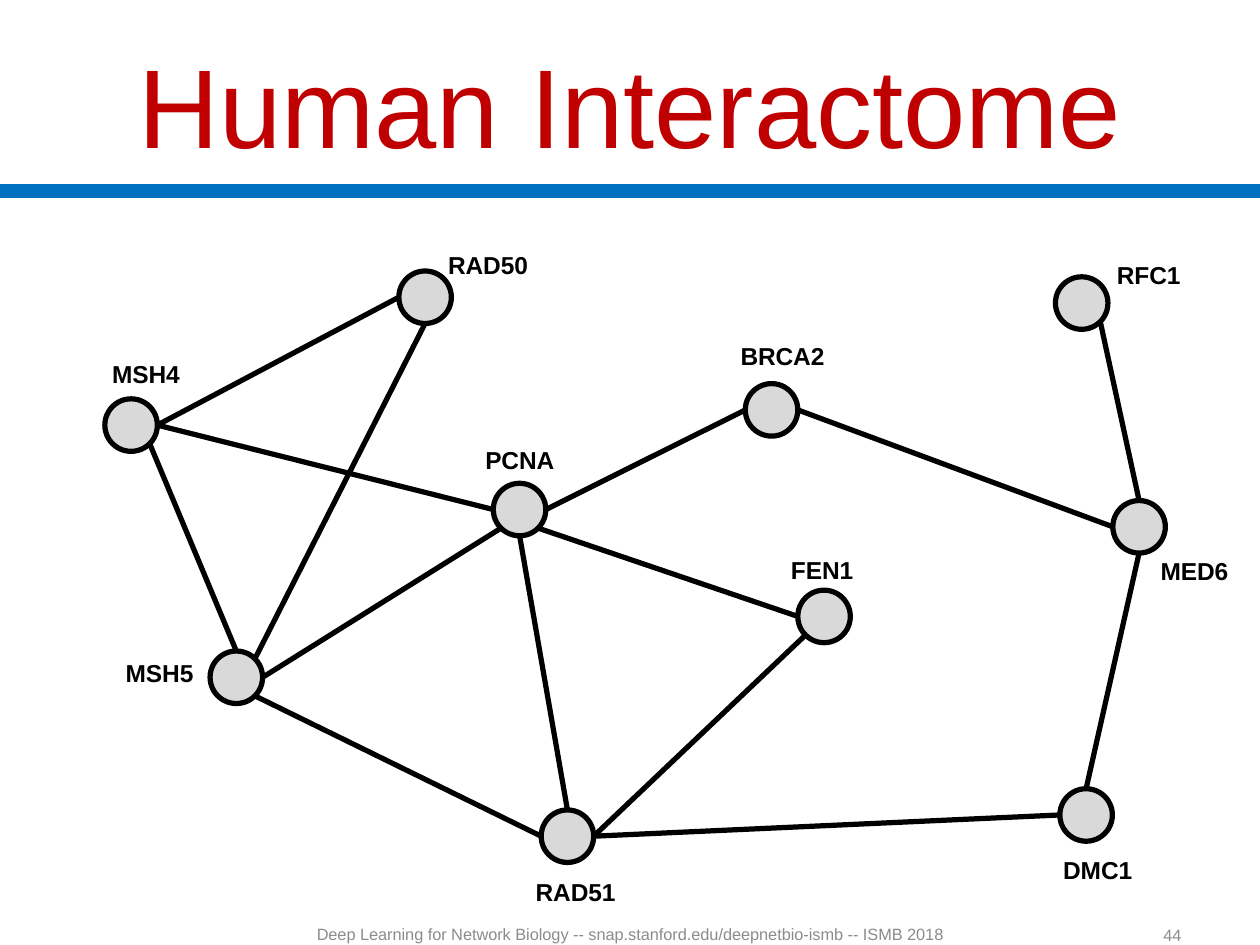
import math

import pptx
import pptx.dml.color
import pptx.enum.shapes
import pptx.enum.text
import pptx.oxml
import pptx.oxml.ns
import pptx.util

Pt = pptx.util.Pt
ALIGN = pptx.enum.text.PP_ALIGN
ANCHOR = pptx.enum.text.MSO_ANCHOR
DIAMETER = 22.5

NODES = {
    "MSH4": (56.2, 182.2, 41, 150.5, 44.6),
    "RAD50": (182.2, 127.4, 185, 103.5, 49),
    "MSH5": (101.3, 290.3, 46.8, 278.5, 44.6),
    "BRCA2": (330.7, 175.7, 310.3, 142.5, 51),
    "PCNA": (222.7, 218.4, 200.9, 187.2, 44.6),
    "RFC1": (463.6, 129.9, 471.6, 108, 42.5),
    "FEN1": (353.2, 264.2, 331.9, 234.2, 41.8),
    "RAD51": (243.2, 358.4, 222.5, 372.2, 49),
    "MED6": (488.2, 225.8, 490.3, 234.7, 44.6),
    "DMC1": (465.5, 349.3, 448.6, 362.9, 45.4),
}

ANGLES = {"E": 0, "SE": 45, "S": 90, "SW": 135, "W": 180, "N": 270, "NE": 315}

EDGES = [
    ("MSH4", "SE", "MSH5", "N"),
    ("PCNA", "SW", "MSH5", "E"),
    ("RAD50", "W", "MSH4", "E"),
    ("FEN1", "SW", "RAD51", "E"),
    ("PCNA", "S", "RAD51", "N"),
    ("RAD51", "W", "MSH5", "SE"),
    ("RAD50", "S", "MSH5", "NE"),
    ("BRCA2", "W", "PCNA", "E"),
    ("PCNA", "SE", "FEN1", "W"),
    ("PCNA", "W", "MSH4", "E"),
    ("RFC1", "SE", "MED6", "N"),
    ("MED6", "S", "DMC1", "N"),
    ("BRCA2", "E", "MED6", "W"),
    ("RAD51", "E", "DMC1", "W"),
]


def rgb(value):
    return pptx.dml.color.RGBColor.from_string(value)


def put_text(tf, text, size=10.5, color="000000", bold=False,
             align=ALIGN.LEFT, anchor=ANCHOR.TOP, wrap=False):
    tf.auto_size = pptx.enum.text.MSO_AUTO_SIZE.NONE
    tf.word_wrap = wrap
    tf.vertical_anchor = anchor
    p = tf.paragraphs[0]
    p.alignment = align
    r = p.add_run()
    r.text = text
    r.font.name = "Arial"
    r.font.size = Pt(size)
    r.font.bold = bold
    r.font.color.rgb = rgb(color)


def rim_point(name, side):
    x, y = NODES[name][:2]
    angle = math.radians(ANGLES[side])
    return x + DIAMETER / 2 * math.cos(angle), y + DIAMETER / 2 * math.sin(angle)


class Deck:
    ink = "000000"
    node_fill = "D9D9D9"
    accent = "0070C0"
    title_color = "C00000"
    muted = "8C8C8C"
    line_width = 2.25

    def __init__(self, width, height):
        self.prs = pptx.Presentation()
        self.prs.slide_width = Pt(width)
        self.prs.slide_height = Pt(height)
        self.s = self.prs.slides.add_slide(self.prs.slide_layouts[5])

    def title(self, text, x, y, w, h):
        sp = self.s.shapes.title
        sp.left, sp.top, sp.width, sp.height = Pt(x), Pt(y), Pt(w), Pt(h)
        put_text(sp.text_frame, text, size=48, color=self.title_color,
                 align=ALIGN.CENTER, anchor=ANCHOR.MIDDLE, wrap=True)

    def text(self, text, x, y, w, h, **style):
        sp = self.s.shapes.add_textbox(Pt(x), Pt(y), Pt(w), Pt(h))
        put_text(sp.text_frame, text, **style)

    def line(self, start, end, color=ink, width=line_width):
        cxn = self.s.shapes.add_connector(
            pptx.enum.shapes.MSO_CONNECTOR.STRAIGHT,
            *(Pt(v) for v in (*start, *end)))
        cxn.line.color.rgb = rgb(color)
        cxn.line.width = Pt(width)
        cxn._element.spPr.append(pptx.oxml.parse_xml(
            "<a:effectLst %s/>" % pptx.oxml.ns.nsdecls("a")))

    def node(self, x, y):
        sp = self.s.shapes.add_shape(
            pptx.enum.shapes.MSO_SHAPE.OVAL, Pt(x - DIAMETER / 2),
            Pt(y - DIAMETER / 2), Pt(DIAMETER), Pt(DIAMETER))
        sp.shadow.inherit = False
        sp.fill.solid()
        sp.fill.fore_color.rgb = rgb(self.node_fill)
        sp.line.color.rgb = rgb(self.ink)
        sp.line.width = Pt(self.line_width)


def main():
    deck = Deck(540, 405)
    deck.line((0, 81.8), (540, 81.8), color=deck.accent, width=6)
    deck.title("Human Interactome", 0, 10.8, 540, 67.7)
    for x, y, *_ in NODES.values():
        deck.node(x, y)
    for a, a_side, b, b_side in EDGES:
        deck.line(rim_point(a, a_side), rim_point(b, b_side))
    for name, (_, _, left, top, width) in NODES.items():
        deck.text(name, left, top, width, 20, bold=True)
    small = dict(size=7, color=deck.muted, anchor=ANCHOR.MIDDLE, wrap=True)
    deck.text("Deep Learning for Network Biology -- "
              "snap.stanford.edu/deepnetbio-ismb -- ISMB 2018",
              92.9, 396, 354.2, 9, align=ALIGN.CENTER, **small)
    deck.text("44", 387.4, 396.4, 126, 9, align=ALIGN.RIGHT, **small)
    deck.prs.save("out.pptx")


if __name__ == "__main__":
    main()
